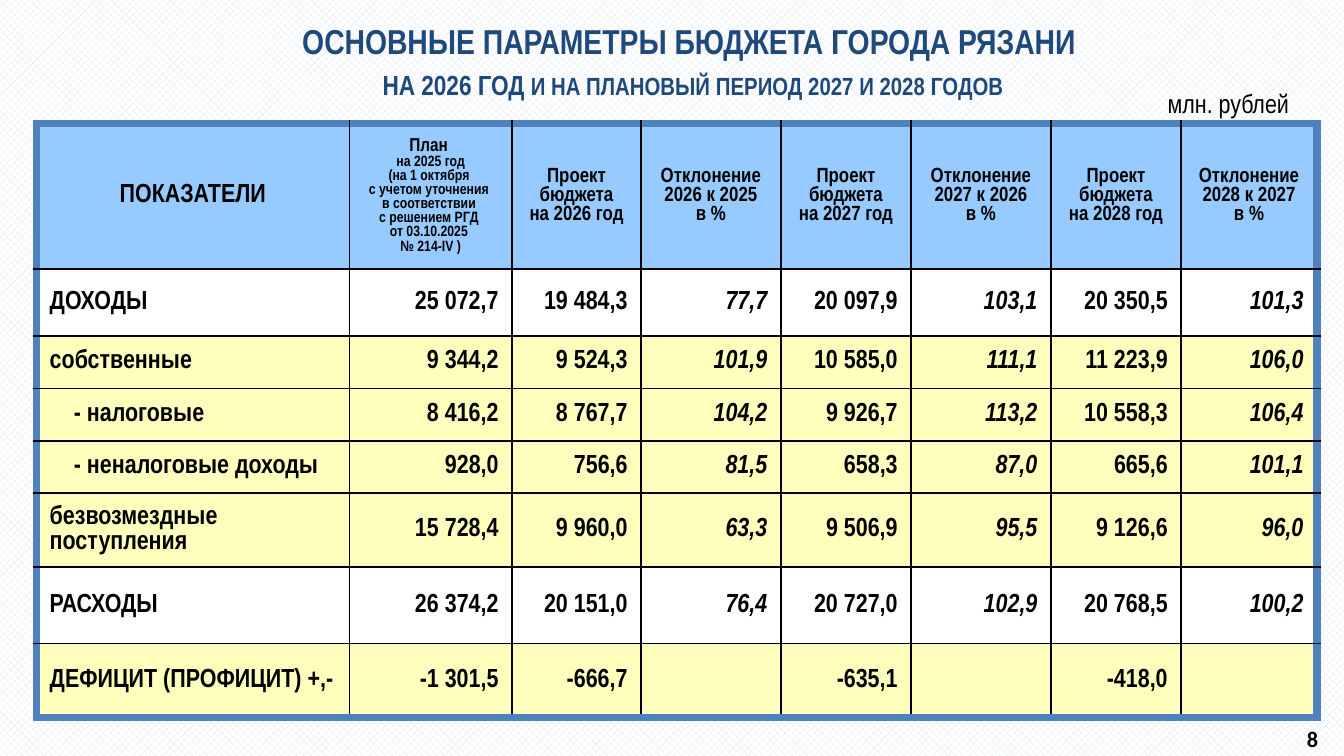
from dataclasses import dataclass

from lxml import etree
from pptx import Presentation
from pptx.dml.color import RGBColor
from pptx.enum.dml import MSO_PATTERN
from pptx.enum.text import MSO_ANCHOR, PP_ALIGN
from pptx.oxml.ns import qn
from pptx.util import Inches, Pt

LEFT, CENTER, RIGHT = PP_ALIGN.LEFT, PP_ALIGN.CENTER, PP_ALIGN.RIGHT
TOP, MIDDLE = MSO_ANCHOR.TOP, MSO_ANCHOR.MIDDLE
CHECKS = MSO_PATTERN.LARGE_CHECKER_BOARD


@dataclass(frozen=True)
class Theme:
    font: str = "Arial Narrow"
    number_font: str = "Calibri"
    ink: str = "000000"
    title: str = "1F497D"
    frame: str = "4F81BD"
    header: str = "97CBFF"
    total: str = "FFFFFF"
    detail: str = "FFFFBD"
    check: str = "DCE6F2"
    title_size: float = 18.5
    period_size: float = 16.6
    body_size: float = 14
    header_size: float = 11
    plan_size: float = 10
    note_size: float = 8
    number_size: float = 11.9
    frame_width: float = 4.5
    grid_width: float = 1


THEME = Theme()

SLIDE_WIDTH = Inches(10)
SLIDE_HEIGHT = SLIDE_WIDTH * 9 // 16
COLUMN_WIDTHS = [2.33, 1.21, 0.96, 1.04, 0.97, 1.04, 0.97, 1.01]
ROW_HEIGHTS = [1.08, 0.5, 0.39, 0.39, 0.39, 0.55, 0.57, 0.55]
SUBITEM_INDENT = 0.18

PLAN_NOTE = [
    "на 2025 год", "(на 1 октября ", "с учетом уточнения ", "в соответствии ",
    "с решением РГД ", "от 03.10.2025 ", "№ 214-IV )",
]

# Label, fill, values by column
BUDGET = [
    ("ДОХОДЫ", THEME.total,
     ["25 072,7", "19 484,3", "77,7", "20 097,9", "103,1", "20 350,5", "101,3"]),
    ("собственные", THEME.detail,
     ["9 344,2", "9 524,3", "101,9", "10 585,0", "111,1", "11 223,9", "106,0"]),
    ("- налоговые", THEME.detail,
     ["8 416,2", "8 767,7", "104,2", "9 926,7", "113,2", "10 558,3", "106,4"]),
    ("- неналоговые доходы", THEME.detail,
     ["928,0", "756,6", "81,5", "658,3", "87,0", "665,6", "101,1"]),
    ("безвозмездные поступления", THEME.detail,
     ["15 728,4", "9 960,0", "63,3", "9 506,9", "95,5", "9 126,6", "96,0"]),
    ("РАСХОДЫ", THEME.total,
     ["26 374,2", "20 151,0", "76,4", "20 727,0", "102,9", "20 768,5", "100,2"]),
    ("ДЕФИЦИТ (ПРОФИЦИТ) +,-", THEME.detail,
     ["-1 301,5", "-666,7", "", "-635,1", "", "-418,0", ""]),
]


def rgb(color):
    return RGBColor.from_string(color)


def add_run(paragraph, text, size, color=THEME.ink, font=THEME.font,
            bold=True, italic=False, small_caps=False):
    run = paragraph.add_run()
    run.text = text
    run.font.size = Pt(size)
    run.font.name = font
    run.font.bold = bold
    run.font.italic = italic
    run.font.color.rgb = rgb(color)
    if small_caps:
        run.font._element.set("cap", "small")


def add_text_area(slide, left, top, width, height, anchor):
    """Add an empty text box and return its centred first paragraph."""
    box = slide.shapes.add_textbox(
        Inches(left), Inches(top), Inches(width), Inches(height))
    box.text_frame.word_wrap = True
    box.text_frame.vertical_anchor = anchor
    paragraph = box.text_frame.paragraphs[0]
    paragraph.alignment = CENTER
    return paragraph


def set_borders(cell, outer_sides):
    """Blue frame on the outer sides, thin black grid elsewhere."""
    properties = cell._tc.get_or_add_tcPr()
    for side in "LRTB":
        outer = side in outer_sides
        width = THEME.frame_width if outer else THEME.grid_width
        line = etree.SubElement(properties, qn(f"a:ln{side}"), w=str(Pt(width)))
        fill = etree.SubElement(line, qn("a:solidFill"))
        etree.SubElement(fill, qn("a:srgbClr"), val=THEME.frame if outer else THEME.ink)


def fill_cell(cell, lines, color, alignment, italic=False):
    """Write (text, size) lines into a cell, one paragraph each."""
    cell.fill.solid()
    cell.fill.fore_color.rgb = rgb(color)
    cell.vertical_anchor = MIDDLE
    cell.margin_left = cell.margin_right = Inches(0.1)
    cell.margin_top = cell.margin_bottom = Inches(0.04)
    for index, (text, size) in enumerate(lines):
        frame = cell.text_frame
        paragraph = frame.add_paragraph() if index else frame.paragraphs[0]
        paragraph.alignment = alignment
        if text.startswith("- "):
            paragraph._p.get_or_add_pPr().set("marL", str(Inches(SUBITEM_INDENT)))
        add_run(paragraph, text, size, italic=italic)


def header_lines():
    """Return the (text, size) lines of each header cell."""
    headers = [
        [("ПОКАЗАТЕЛИ", THEME.body_size)],
        [("План ", THEME.plan_size)] + [(text, THEME.note_size) for text in PLAN_NOTE],
    ]
    for year in (2026, 2027, 2028):
        project = ["Проект бюджета", f"на {year} год"]
        deviation = ["Отклонение", f"{year} к {year - 1}", "в %"]
        headers += [[(text, THEME.header_size) for text in lines]
                    for lines in (project, deviation)]
    return headers


def add_budget_table(slide):
    rows, columns = len(ROW_HEIGHTS), len(COLUMN_WIDTHS)
    table = slide.shapes.add_table(
        rows, columns, Inches(0.27), Inches(0.92),
        Inches(sum(COLUMN_WIDTHS)), Inches(sum(ROW_HEIGHTS))).table
    table.first_row = table.horz_banding = False
    for column, width in zip(table.columns, COLUMN_WIDTHS):
        column.width = Inches(width)
    for row, height in zip(table.rows, ROW_HEIGHTS):
        row.height = Inches(height)

    # Frame and grid
    for r in range(rows):
        for c in range(columns):
            edges = {"L": c == 0, "R": c == columns - 1, "T": r == 0, "B": r == rows - 1}
            set_borders(table.cell(r, c), [side for side, outer in edges.items() if outer])

    # Header
    for c, lines in enumerate(header_lines()):
        fill_cell(table.cell(0, c), lines, THEME.header, CENTER)

    # Indicators: deviation columns are italic
    for r, (label, color, values) in enumerate(BUDGET, start=1):
        fill_cell(table.cell(r, 0), [(label, THEME.body_size)], color, LEFT)
        for c, value in enumerate(values, start=1):
            lines = [(value, THEME.body_size)] if value else []
            fill_cell(table.cell(r, c), lines, color, RIGHT, italic=c in (3, 5, 7))


def add_title(slide):
    title = add_text_area(slide, 0.27, 0.14, 9.77, 0.63, MIDDLE)
    add_run(title, "ОСНОВНЫЕ ПАРАМЕТРЫ БЮДЖЕТА ГОРОДА РЯЗАНИ ",
            THEME.title_size, THEME.title)
    title.add_line_break()
    add_run(title, "на 2026 год ", THEME.title_size, THEME.title, small_caps=True)
    add_run(title, "и на плановый период 2027 и 2028 годов",
            THEME.period_size, THEME.title, small_caps=True)


def main():
    deck = Presentation()
    deck.slide_width, deck.slide_height = SLIDE_WIDTH, SLIDE_HEIGHT
    slide = deck.slides.add_slide(deck.slide_layouts[6])

    # Background
    background = slide.background.fill
    background.patterned()
    background.pattern = CHECKS
    background.fore_color.rgb = rgb(THEME.check)
    background.back_color.rgb = rgb(THEME.total)

    add_budget_table(slide)

    # Unit, title and page number
    unit = add_text_area(slide, 8.47, 0.61, 1.34, 0.31, MIDDLE)
    add_run(unit, "млн. рублей", THEME.body_size, bold=False)
    add_title(slide)
    page = add_text_area(slide, 9.57, 5.35, 0.39, 0.26, TOP)
    add_run(page, "8", THEME.number_size, font=THEME.number_font)

    deck.save("out.pptx")


if __name__ == "__main__":
    main()
